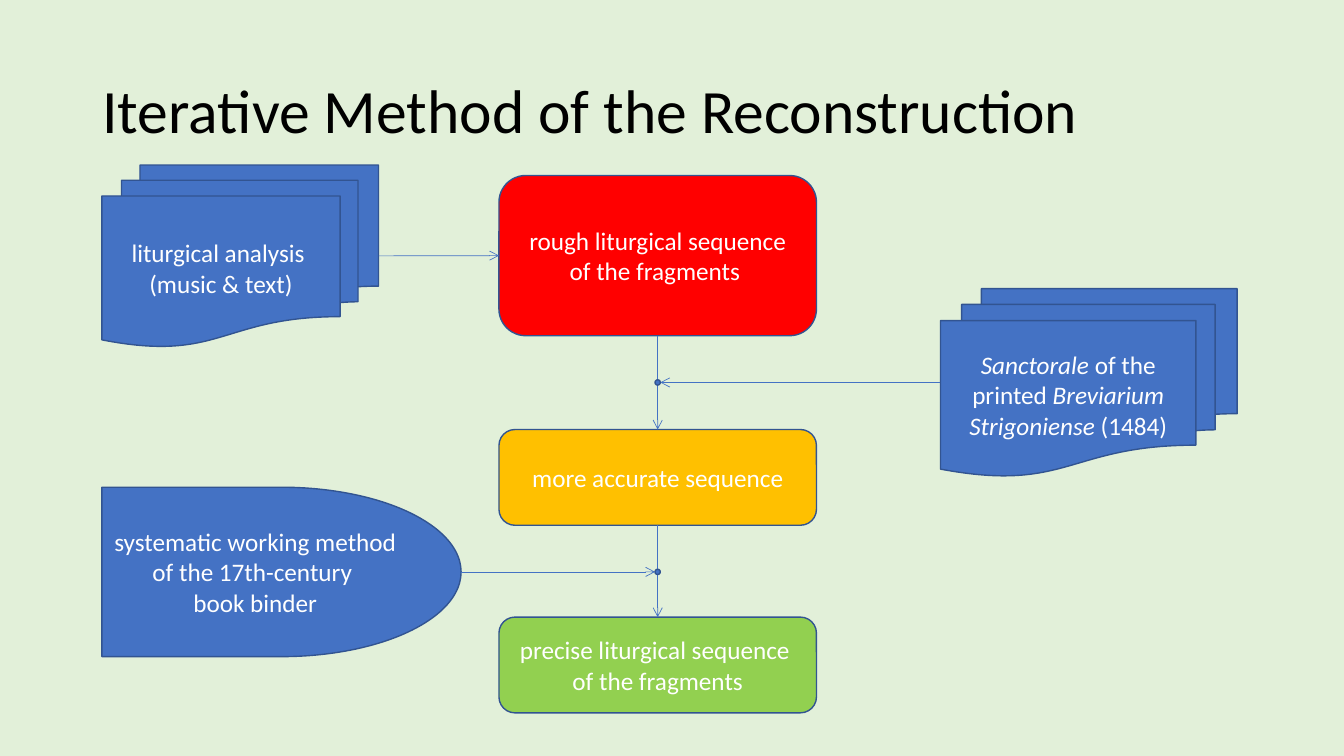
import pptx
import pptx.util
import pptx.dml.color
import pptx.enum.shapes
import pptx.enum.text
import pptx.oxml

Pt = pptx.util.Pt
KIND = pptx.enum.shapes.MSO_SHAPE
TEXT = pptx.enum.text
FONT = "Calibri"
HUES = {
    "back": "E2F0D9", "blue": "4472C4", "edge": "325491", "red": "FF0000",
    "gold": "FFC000", "green": "92D050", "white": "FFFFFF", "black": "000000",
}
TITLE = "Iterative Method of the Reconstruction"

# Stages of the central column: name, top, height, fill, text
COL, WIDE = 356.4, 226.8
STAGES = [
    ("rough", 125.4, 114.4, "red", "rough liturgical sequence of the fragments "),
    ("finer", 306.8, 68.4, "gold", "more accurate sequence"),
    ("exact", 440.8, 68.4, "green", "precise liturgical sequence \nof the fragments"),
]
# Inputs: name, kind, box, text; asterisks enclose italics
INPUTS = [
    ("music", KIND.FLOWCHART_MULTIDOCUMENT, (72.8, 117.9, 197.6, 129.8),
     "liturgical analysis \n(music & text)"),
    ("print", KIND.FLOWCHART_MULTIDOCUMENT, (671.8, 206.2, 211.9, 134),
     "*Sanctorale *of the printed *Breviarium Strigoniense *(1484)"),
    ("binder", KIND.FLOWCHART_DELAY, (72.8, 348, 256.6, 121),
     "systematic working method of the 17th-century \nbook binder"),
]
FLOWS = [("music", 3, "rough", 1), ("rough", 2, "finer", 0), ("finer", 2, "exact", 0)]
# Inputs that meet the column at a dot: name, side, direction of the input
JOINS = [("print", 1, 1), ("binder", 3, -1)]
DOT = 3.8


def color(name):
    return pptx.dml.color.RGBColor.from_string(HUES[name])


def style(font, size, hue):
    font.name, font.size = FONT, Pt(size)
    font.color.rgb = color(hue)


def block(kind, box, fill, text=""):
    shape = slide.shapes.add_shape(kind, *map(Pt, box))
    shape.shadow.inherit = False
    shape.fill.solid()
    shape.fill.fore_color.rgb = color(fill)
    shape.line.color.rgb = color("edge")
    shape.line.width = Pt(1)
    if text:
        frame = shape.text_frame
        frame.word_wrap = True
        frame.vertical_anchor = TEXT.MSO_ANCHOR.MIDDLE
        para = frame.paragraphs[0]
        para.alignment = TEXT.PP_ALIGN.CENTER
        style(para.font, 18, "white")
        for row, line in enumerate(text.split("\n")):
            if row:
                para.add_line_break()
            for turn, part in enumerate(line.split("*")):
                if part:
                    run = para.add_run()
                    run.text = part
                    if turn % 2:
                        run.font.italic = True
    return shape


def arrow(start, side, x=0, y=0):
    """Draw an arrow from a side of a shape to a point."""
    link = slide.shapes.add_connector(
        pptx.enum.shapes.MSO_CONNECTOR.STRAIGHT, 0, 0, x, y)
    link.begin_connect(start, side)
    link.line.color.rgb = color("blue")
    link.line.width = Pt(0.5)
    tip = pptx.oxml.parse_xml(
        '<a:tailEnd xmlns:a="http://schemas.openxmlformats.org/drawingml/2006/main"'
        ' type="arrow"/>')
    link.line._get_or_add_ln().append(tip)
    link._element.spPr.append(pptx.oxml.parse_xml(
        '<a:effectLst xmlns:a="http://schemas.openxmlformats.org/drawingml/2006/main"/>'))
    return link


deck = pptx.Presentation()
deck.slide_width, deck.slide_height = Pt(960), Pt(540)
slide = deck.slides.add_slide(deck.slide_layouts[5])
slide.background.fill.solid()
slide.background.fill.fore_color.rgb = color("back")

title = slide.shapes.title
title.left, title.top, title.width, title.height = map(Pt, (66, 28.8, 828, 104.4))
title.text_frame.text = TITLE
title.text_frame.word_wrap = True
title.text_frame.vertical_anchor = TEXT.MSO_ANCHOR.MIDDLE
head = title.text_frame.paragraphs[0]
head.alignment = TEXT.PP_ALIGN.LEFT
head.line_spacing = 0.9
style(head.font, 44, "black")

parts = {}
for name, top, high, fill, text in STAGES:
    parts[name] = block(KIND.FLOWCHART_ALTERNATE_PROCESS, (COL, top, WIDE, high), fill, text)
for name, kind, box, text in INPUTS:
    parts[name] = block(kind, box, "blue", text)

for start, side, end, port in FLOWS:
    arrow(parts[start], side).end_connect(parts[end], port)

mid = COL + WIDE / 2
for name, side, way in JOINS:
    shape = parts[name]
    y = (shape.top + shape.height / 2) / Pt(1)
    arrow(shape, side, Pt(mid + way * DOT / 2), Pt(y))
    block(KIND.FLOWCHART_CONNECTOR, (mid - DOT / 2, y - DOT / 2, DOT, DOT), "blue")

deck.save("out.pptx")
